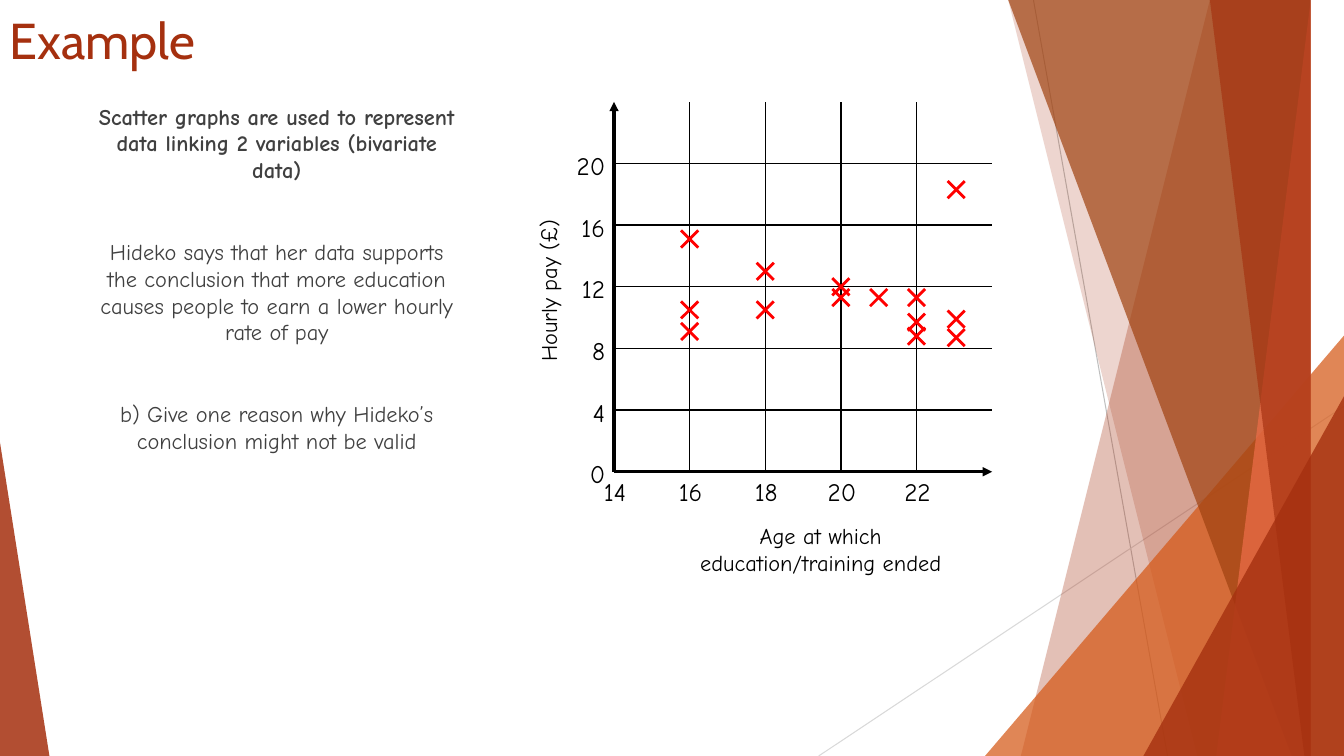
from pptx import Presentation
from pptx.dml.color import RGBColor
from pptx.enum.shapes import MSO_CONNECTOR as Connector, MSO_SHAPE as Preset
from pptx.enum.text import MSO_ANCHOR as Anchor, PP_ALIGN as Align
from pptx.oxml.ns import qn
from pptx.util import Inches, Pt
from lxml import etree

WIDTH, HEIGHT = 13.33, 7.5
COLORS = {
    "rust": "A5300F", "orange": "D55816", "brown": "A04210", "coral": "EE6E4A",
    "grey": "BFBFBF", "pale": "D9D9D9", "body": "404040",
    "black": "000000", "red": "FF0000",
}
HEADING, HAND = "Cabin", "Comic Neue"

# Hourly pay by the age at which education ended
AGES = range(14, 24, 2)
PAYS = range(0, 24, 4)
PEOPLE = [
    (16, 9.1), (22, 8.8), (20, 11.3), (16, 10.5), (18, 10.5), (16, 15.1), (18, 13),
    (21, 11.3), (22, 9.7), (20, 12), (22, 11.3), (23.05, 8.7), (23.05, 9.9), (23.05, 18.3),
]


def color(name):
    return RGBColor.from_string(COLORS[name])


def add_line(shapes, start, end, name, weight, arrow=False):
    line = shapes.add_connector(Connector.STRAIGHT, *map(Inches, (*start, *end)))
    line.line.color.rgb = color(name)
    line.line.width = Pt(weight)
    if arrow:
        etree.SubElement(line.line._get_or_add_ln(), qn("a:tailEnd"), type="triangle")
    etree.SubElement(line._element.spPr, qn("a:effectLst"))


def paint(shape, name, opacity):
    shape.shadow.inherit = False
    shape.line.fill.background()
    shape.fill.solid()
    shape.fill.fore_color.rgb = color(name)
    tint = shape._element.spPr.find(qn("a:solidFill"))[0]
    etree.SubElement(tint, qn("a:alpha"), val=str(opacity * 1000))


def add_text(page, box, texts, size, name, font=HAND, align=Align.CENTER,
             anchor=Anchor.TOP, gap=0):
    area = page.shapes.add_textbox(*map(Inches, box))
    frame = area.text_frame
    frame.word_wrap = True
    frame.vertical_anchor = anchor
    for index, text in enumerate(texts):
        para = frame.add_paragraph() if index else frame.paragraphs[0]
        para.text = text
        para.alignment = align
        para.space_before = Pt(gap if index else 0)
        para.font.name = font
        para.font.size = Pt(size)
        para.font.color.rgb = color(name)
    return area


def add_panel(page, top_x, bottom_x, name, opacity):
    """Fill from a slanted left edge to the right side of the slide."""
    builder = page.shapes.build_freeform(top_x, 0, scale=Inches(1))
    builder.add_line_segments([(WIDTH, 0), (WIDTH, HEIGHT), (bottom_x, HEIGHT)])
    paint(builder.convert_to_shape(), name, opacity)


def add_corner(page, left, width, height, apex, name, opacity):
    """Triangle standing on the bottom edge of the slide."""
    corner = page.shapes.add_shape(
        Preset.ISOSCELES_TRIANGLE, *map(Inches, (left, HEIGHT - height, width, height)))
    corner.adjustments[0] = apex
    paint(corner, name, opacity)


def draw_backdrop(page):
    add_line(page.shapes, (10.25, 0), (11.58, HEIGHT), "grey", 0.75)
    add_line(page.shapes, (WIDTH, 4.03), (8.12, HEIGHT), "pale", 0.75)
    add_panel(page, 12.28, 10.04, "rust", 30)
    add_panel(page, 10.5, 11.83, "rust", 20)
    add_corner(page, 9.77, 3.56, 4.17, 1, "orange", 72)
    add_panel(page, 10.21, 12.91, "brown", 70)
    add_panel(page, 13.03, 11.92, "coral", 70)
    add_panel(page, 11.96, 13.18, "rust", 65)
    add_corner(page, 11.34, 1.99, 3.57, 1, "rust", 80)
    add_corner(page, 0, 0.49, 3.11, 0, "rust", 85)


def draw_question(page, box):
    area = add_text(page, box, [
        "Scatter graphs are used to represent data linking 2 variables (bivariate data)",
        "Hideko says that her data supports the conclusion that more education "
        "causes people to earn a lower hourly rate of pay",
        "b) Give one reason why Hideko’s conclusion might not be valid",
    ], 16, "body", gap=39)
    area.text_frame.paragraphs[0].font.bold = True


def add_cross(page, x, y, reach=0.085):
    cross = page.shapes.add_group_shape()
    for rise in (reach, -reach):
        add_line(cross.shapes, (x - reach, y - rise), (x + reach, y + rise), "red", 2)


def draw_graph(page, box):
    left, top, width, height = box
    right, bottom = left + width, top + height

    def age_x(age):
        return left + (age - AGES[0]) * width / 10

    def pay_y(pay):
        return bottom - pay * height / 24

    # Grid, with the axes as its first lines
    for pay in PAYS:
        y, axis = pay_y(pay), pay == PAYS[0]
        add_line(page.shapes, (left, y), (right, y), "black", 2.25 if axis else 1, axis)
        add_text(page, (left - 0.59, y - 0.18, 0.6, 0.4), [str(pay)], 18, "black",
                 align=Align.RIGHT, anchor=Anchor.MIDDLE)
    for age in AGES:
        x, axis = age_x(age), age == AGES[0]
        add_line(page.shapes, (x, bottom), (x, top), "black", 2.25 if axis else 1, axis)
        add_text(page, (x - 0.29, bottom, 0.6, 0.4), [str(age)], 18, "black")

    # Axis titles
    add_text(page, (left + 0.55, bottom + 0.45, 3, 0.64),
             ["Age at which education/training ended"], 16, "black")
    pay_title = add_text(page, (left - 2.44, top + 1.69, 3.58, 0.37),
                         ["Hourly pay (£)"], 16, "black")
    pay_title.rotation = 270

    # Points
    for age, pay in PEOPLE:
        add_cross(page, age_x(age), pay_y(pay))


def main():
    deck = Presentation()
    deck.slide_width, deck.slide_height = Inches(WIDTH), Inches(HEIGHT)
    page = deck.slides.add_slide(deck.slide_layouts[6])
    draw_backdrop(page)
    add_text(page, (0, 0, 9.4, 0.78), ["Example"], 36, "rust", HEADING,
             Align.LEFT, Anchor.MIDDLE)
    draw_question(page, (0.84, 0.97, 3.81, 5.22))
    draw_graph(page, (6.09, 1.01, 3.75, 3.67))
    deck.save("out.pptx")


if __name__ == "__main__":
    main()
